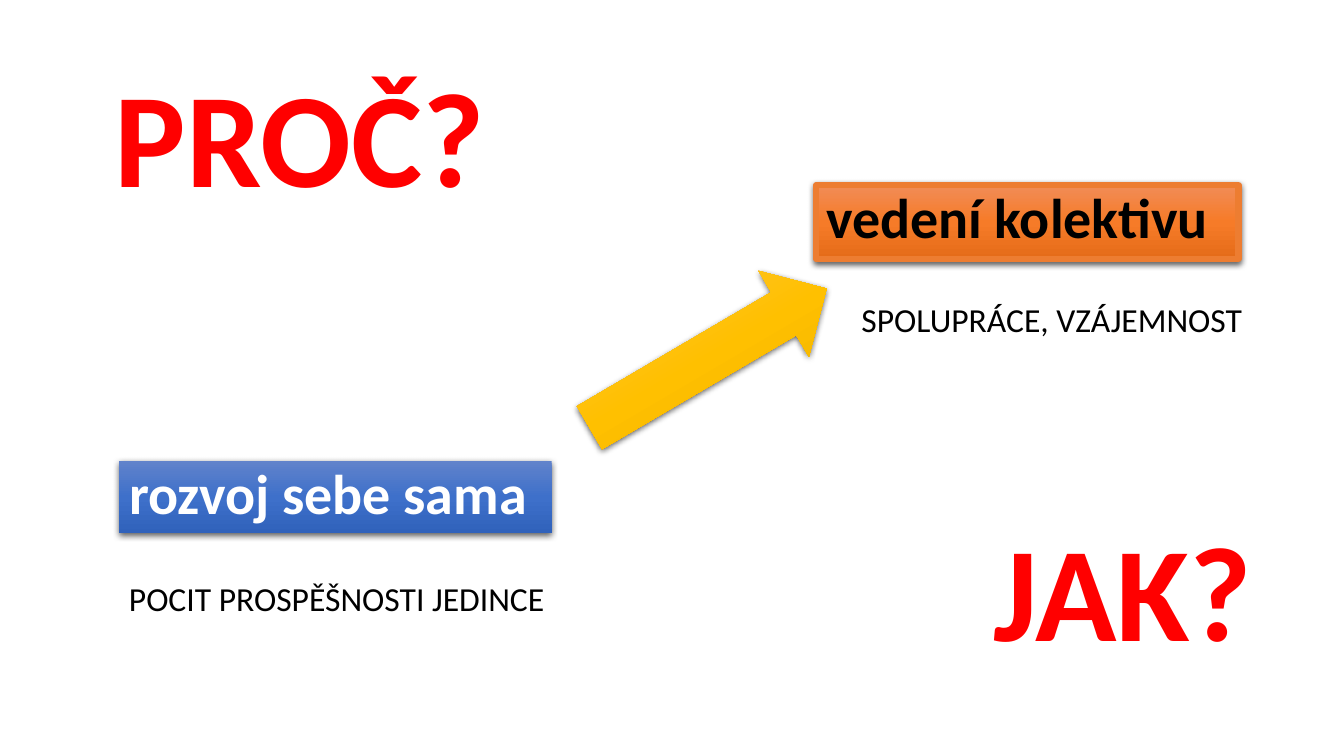
import copy
import dataclasses
import typing

import lxml.etree
import pptx
import pptx.dml.color
import pptx.enum.shapes
import pptx.enum.text
import pptx.oxml.ns
import pptx.shapes.autoshape
import pptx.shapes.base
import pptx.slide
import pptx.util

Cm = pptx.util.Cm
Pt = pptx.util.Pt
RGBColor = pptx.dml.color.RGBColor
Anchor = pptx.enum.text.MSO_ANCHOR
Preset = pptx.enum.shapes.MSO_SHAPE
qualified = pptx.oxml.ns.qn

FONT = "Calibri"
RED = RGBColor(0xFF, 0x00, 0x00)
BLACK = RGBColor(0x00, 0x00, 0x00)
WHITE = RGBColor(0xFF, 0xFF, 0xFF)
ORANGE = RGBColor(0xED, 0x7D, 0x31)
BLUE_SHADES = (RGBColor(0x61, 0x83, 0xCB), RGBColor(0x3E, 0x70, 0xCA), RGBColor(0x30, 0x62, 0xBB))
ORANGE_SHADES = (RGBColor(0xF1, 0x8C, 0x57), RGBColor(0xF6, 0x7B, 0x28), RGBColor(0xE5, 0x6C, 0x19))
GOLD_SHADES = (RGBColor(0xFF, 0xC6, 0x4B), RGBColor(0xFF, 0xC0, 0x00), RGBColor(0xE3, 0xAB, 0x00))


@dataclasses.dataclass(frozen=True)
class Area:
    left: float
    top: float
    width: float
    height: float

    def lengths(self) -> tuple[int, int, int, int]:
        return Cm(self.left), Cm(self.top), Cm(self.width), Cm(self.height)


@dataclasses.dataclass(frozen=True)
class Caption:
    text: str
    area: Area
    format: dict[str, typing.Any]


QUESTION = dict(size=96, color=RED, bold=True, spacing=0.9, anchor=Anchor.MIDDLE)
HEADING = dict(size=40, bold=True, spacing=0.9)
DETAIL = dict(size=24, color=BLACK)

WHY = Caption("PROČ?", Area(2.64, 1.65, 10.44, 3.96), QUESTION)
SELF = Caption("rozvoj sebe sama", Area(3, 11.61, 10.9, 1.83), HEADING | dict(color=WHITE))
TEAM = Caption("vedení kolektivu", Area(20.57, 4.67, 10.64, 1.85), HEADING | dict(color=BLACK))
ARROW_AREA = Area(14.38, 7.77, 6.93, 2.51)
FREE_CAPTIONS = (
    Caption("JAK?", Area(24.79, 13.08, 7.04, 3.96), QUESTION),
    Caption("POCIT PROSPĚŠNOSTI JEDINCE", Area(3, 14.43, 11.84, 1.27), DETAIL),
    Caption("SPOLUPRÁCE, VZÁJEMNOST", Area(21.46, 7.42, 11.84, 1.27), DETAIL),
)


def write_text(
    box: pptx.shapes.autoshape.Shape,
    text: str,
    *,
    size: float,
    color: RGBColor,
    bold: bool = False,
    spacing: float = 1.0,
    anchor: Anchor = Anchor.TOP,
) -> None:
    frame = box.text_frame
    frame.text = text
    frame.word_wrap = True
    frame.auto_size = pptx.enum.text.MSO_AUTO_SIZE.NONE
    frame.vertical_anchor = anchor
    para = frame.paragraphs[0]
    para.alignment = pptx.enum.text.PP_ALIGN.LEFT
    para.line_spacing = spacing
    para.space_before = Pt(0)
    span = para.runs[0]
    span.font.name = FONT
    span.font.size = Pt(size)
    span.font.bold = bold
    span.font.color.rgb = color


def fill_caption(box: pptx.shapes.autoshape.Shape, caption: Caption) -> None:
    box.left, box.top, box.width, box.height = caption.area.lengths()
    write_text(box, caption.text, **caption.format)


def remove_bullet(box: pptx.shapes.autoshape.Shape) -> None:
    properties = box.text_frame.paragraphs[0]._p.get_or_add_pPr()
    properties.set("marL", "0")
    properties.set("indent", "0")
    lxml.etree.SubElement(properties, qualified("a:buNone"))


def add_shadow(shape: pptx.shapes.base.BaseShape) -> None:
    shape.shadow.inherit = False
    effects = shape._element.spPr.find(qualified("a:effectLst"))
    shadow = lxml.etree.SubElement(
        effects,
        qualified("a:outerShdw"),
        blurRad=str(Pt(4.5)),
        dist=str(Pt(1.5)),
        dir="5400000",
        algn="ctr",
        rotWithShape="0",
    )
    color = lxml.etree.SubElement(shadow, qualified("a:srgbClr"), val=str(BLACK))
    lxml.etree.SubElement(color, qualified("a:alpha"), val="63000")


def style_shape(
    shape: pptx.shapes.autoshape.Shape,
    shades: tuple[RGBColor, ...],
    border: typing.Optional[RGBColor] = None,
) -> None:
    shape.fill.gradient()
    shape.fill.gradient_angle = 270
    stop_list = shape._element.spPr.find(".//" + qualified("a:gsLst"))
    stop_list.append(copy.deepcopy(stop_list[0]))
    for index, (stop, shade) in enumerate(zip(shape.fill.gradient_stops, shades)):
        stop.position = index / (len(shades) - 1)
        stop.color.rgb = shade
    if border is None:
        shape.line.fill.background()
    else:
        shape.line.color.rgb = border
        shape.line.width = Pt(4.5)
    add_shadow(shape)


def build_page(page: pptx.slide.Slide) -> None:
    body = page.placeholders[1]
    fill_caption(body, SELF)
    remove_bullet(body)
    style_shape(body, BLUE_SHADES)

    fill_caption(page.shapes.title, WHY)

    team_box = page.shapes.add_shape(Preset.RECTANGLE, *TEAM.area.lengths())
    fill_caption(team_box, TEAM)
    style_shape(team_box, ORANGE_SHADES, border=ORANGE)

    arrow = page.shapes.add_shape(Preset.RIGHT_ARROW, *ARROW_AREA.lengths())
    arrow.rotation = 329.6
    style_shape(arrow, GOLD_SHADES)

    for caption in FREE_CAPTIONS:
        fill_caption(page.shapes.add_textbox(*caption.area.lengths()), caption)


def main() -> None:
    deck = pptx.Presentation()
    deck.slide_width = Cm(33.87)
    deck.slide_height = Cm(19.05)
    build_page(deck.slides.add_slide(deck.slide_layouts[1]))
    deck.save("out.pptx")


if __name__ == "__main__":
    main()
